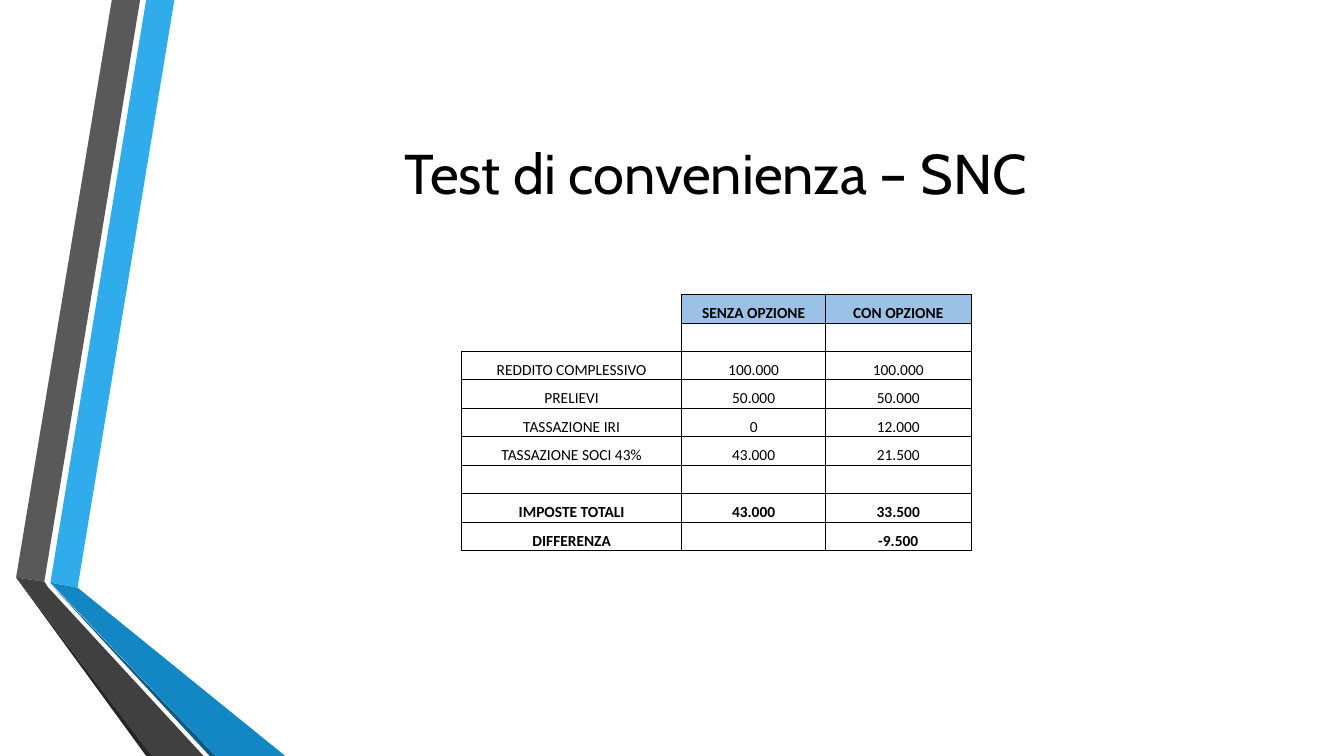
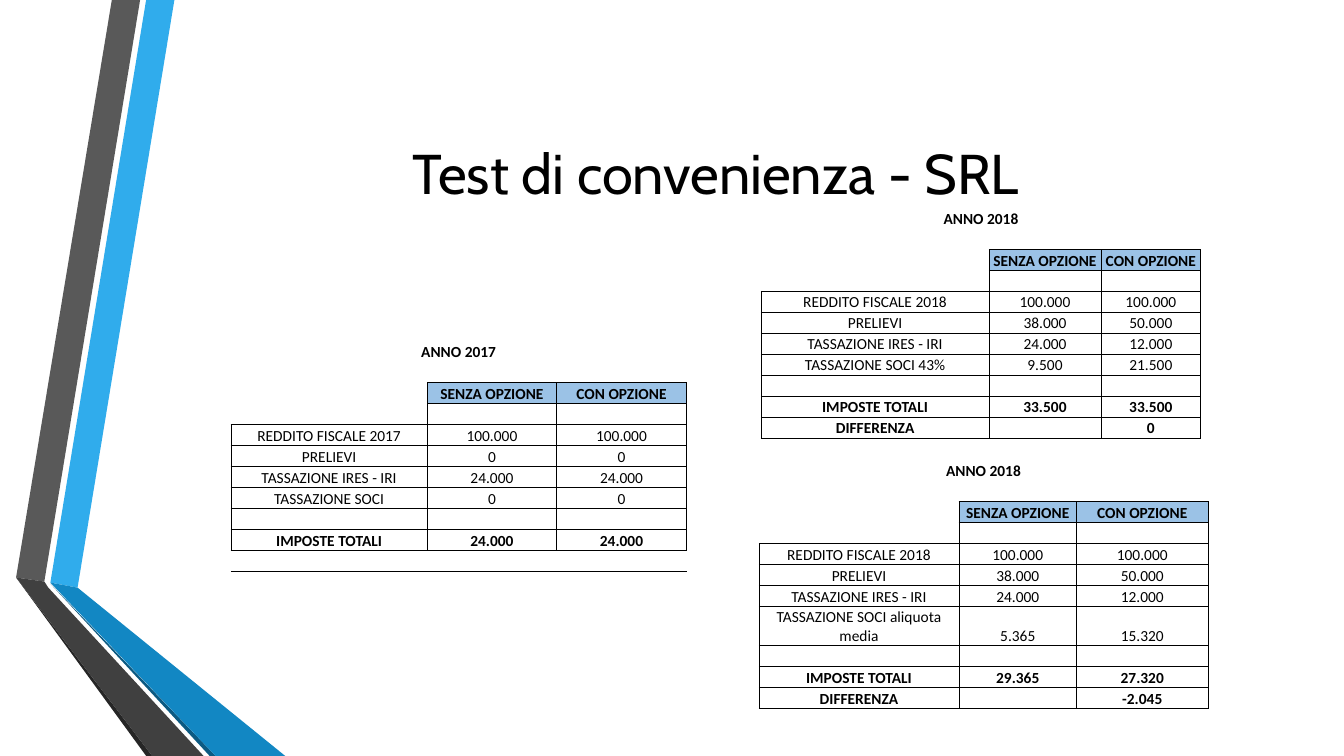
from lxml.etree import SubElement
from pptx import Presentation
from pptx.dml.color import RGBColor
from pptx.enum.text import MSO_ANCHOR, PP_ALIGN
from pptx.oxml.ns import qn
from pptx.util import Inches, Pt

COLORS = {
    "text": "000000", "paper": "FFFFFF", "header": "9BC2E6",
    "blue": "30ACEC", "blue_fold": "1287C3", "blue_edge": "0C5A82",
    "gray": "595959", "gray_fold": "404040", "gray_edge": "262626",
}
BANDS = [
    ("blue", [(0.5, 5.78), (0.77, 5.83), (1.73, 0), (1.45, 0)]),
    ("gray", [(1.39, 0), (1.11, 0), (0.16, 5.73), (0.44, 5.77)]),
    ("gray_edge", [(0.16, 5.73), (1.45, 7.5), (1.51, 7.5)]),
    ("blue_edge", [(0.5, 5.79), (2.08, 7.5), (2.14, 7.5)]),
    ("blue_fold", [(0.5, 5.78), (2.14, 7.5), (2.83, 7.5), (0.77, 5.83)]),
    ("gray_fold", [(0.16, 5.73), (1.51, 7.5), (2.02, 7.5), (0.48, 5.83), (0.44, 5.77)]),
]
NO_STYLE = "{2D5ABB26-0587-4C30-8999-92F81FD0307C}"
SIDES = {"a:lnL": (0, -1), "a:lnR": (0, 1), "a:lnT": (-1, 0), "a:lnB": (1, 0)}
CELL_FORMAT = {
    "margin_left": Inches(0.01), "margin_right": Inches(0.01),
    "margin_top": Inches(0.01), "margin_bottom": 0,
    "vertical_anchor": MSO_ANCHOR.BOTTOM,
}
CELL_FONT = {"name": "Calibri", "size": Pt(11)}
TITLE_FONT = {"name": "Cabin", "size": Pt(40), "bold": False}

BLANK = ("", "", "")
HEADER = ("", "SENZA OPZIONE", "CON OPZIONE")


def rgb(color):
    return RGBColor.from_string(COLORS[color])


def apply(target, values):
    for attribute, value in values.items():
        setattr(target, attribute, value)


class Deck:
    def __init__(self):
        self.prs = Presentation()
        self.prs.slide_width, self.prs.slide_height = Inches(13.33), Inches(7.5)
        self.slide = None

    def add_slide(self, title):
        self.slide = self.prs.slides.add_slide(self.prs.slide_layouts[5])
        background = self.slide.background.fill
        background.solid()
        background.fore_color.rgb = rgb("paper")
        for color, outline in BANDS:
            self.add_band(color, outline)
        self.add_title(title)

    def add_band(self, color, outline):
        start, *others = [(Inches(x), Inches(y)) for x, y in outline]
        builder = self.slide.shapes.build_freeform(*start)
        builder.add_line_segments(others, close=True)
        band = builder.convert_to_shape()
        band.shadow.inherit = False
        band.fill.solid()
        band.fill.fore_color.rgb = rgb(color)
        band.line.fill.background()

    def add_title(self, text):
        title = self.slide.shapes.title
        apply(title, {"left": Inches(1.62), "top": Inches(0.75),
                      "width": Inches(10.96), "height": Inches(1.92)})
        frame = title.text_frame
        apply(frame, {"text": text, "word_wrap": True, "vertical_anchor": MSO_ANCHOR.MIDDLE})
        self.format_text(frame.paragraphs[0], TITLE_FONT)

    def format_text(self, paragraph, font):
        paragraph.alignment = PP_ALIGN.CENTER
        for run in paragraph.runs:
            apply(run.font, font)
            run.font.color.rgb = rgb("text")

    def add_comparison(self, left, top, widths, row_height, body, totals,
                       caption=None, blank_above=0, blank_below=1, tall_rows=None):
        """Add a ruled three-column grid inside a margin of empty, unruled cells."""
        lead = [BLANK] * blank_above
        if caption:
            lead += [(caption, "", ""), BLANK]
        rows = lead + [HEADER, BLANK, *body, BLANK, *totals] + [BLANK] * blank_below
        header_row = len(lead)
        totals_row = header_row + len(body) + 3
        end_row = totals_row + len(totals)

        def is_ruled(row, column):
            first_row = header_row + 2 if column == 1 else header_row
            return 1 <= column <= 3 and first_row <= row < end_row

        heights = [(tall_rows or {}).get(label, row_height) for label, *_ in rows]
        frame = self.slide.shapes.add_table(
            len(rows), len(widths), Inches(left), Inches(top),
            Inches(sum(widths)), Inches(sum(heights)))
        table = frame.table
        apply(table, {"first_row": False, "horz_banding": False})
        for style in frame._element.iter(qn("a:tableStyleId")):
            style.text = NO_STYLE
        for column, width in zip(table.columns, widths):
            column.width = Inches(width)
        for row, height in zip(table.rows, heights):
            row.height = Inches(height)

        for r, texts in enumerate(rows):
            bold = r <= header_row or r >= totals_row
            for c, text in enumerate(("", *texts, "")):
                cell = table.cell(r, c)
                sides = [side for side, (dr, dc) in SIDES.items()
                         if is_ruled(r, c) or is_ruled(r + dr, c + dc)]
                self.fill_cell(cell, text, bold, sides)
                if r == header_row and text:
                    cell.fill.solid()
                    cell.fill.fore_color.rgb = rgb("header")
        if caption:
            caption_row = blank_above
            table.cell(caption_row, 1).merge(table.cell(caption_row, 3))

    def fill_cell(self, cell, text, bold, sides):
        apply(cell, CELL_FORMAT)
        paragraph = cell.text_frame.paragraphs[0]
        if text:
            paragraph.add_run().text = text
        self.format_text(paragraph, {**CELL_FONT, "bold": bold})
        if not text:
            SubElement(paragraph._p, qn("a:endParaRPr"), sz="1100")
        properties = cell._tc.get_or_add_tcPr()
        for side in sides:
            line = SubElement(properties, qn(side), w=str(Pt(0.5)))
            fill = SubElement(line, qn("a:solidFill"))
            SubElement(fill, qn("a:srgbClr"), val=COLORS["text"])
        cell.fill.background()


def main():
    deck = Deck()
    deck.add_slide("Test di convenienza – SNC")
    deck.add_comparison(
        3.83, 2.64, [0.75, 2.18, 1.43, 1.44, 0.75], 0.282, blank_above=1,
        body=[("REDDITO COMPLESSIVO", "100.000", "100.000"),
              ("PRELIEVI", "50.000", "50.000"),
              ("TASSAZIONE IRI", "0", "12.000"),
              ("TASSAZIONE SOCI 43%", "43.000", "21.500")],
        totals=[("IMPOSTE TOTALI", "43.000", "33.500"),
                ("DIFFERENZA", "", "-9.500")])

    deck.add_slide("Test di convenienza - SRL")
    row_height = 0.208
    deck.add_comparison(
        1.62, 3.38, [0.67, 1.95, 1.28, 1.29, 0.67], row_height,
        caption="ANNO 2017", blank_below=2,
        body=[("REDDITO FISCALE 2017", "100.000", "100.000"),
              ("PRELIEVI", "0", "0"),
              ("TASSAZIONE IRES - IRI", "24.000", "24.000"),
              ("TASSAZIONE SOCI", "0", "0")],
        totals=[("IMPOSTE TOTALI", "24.000", "24.000")])

    body_2018 = [("REDDITO FISCALE 2018", "100.000", "100.000"),
                 ("PRELIEVI", "38.000", "50.000"),
                 ("TASSAZIONE IRES - IRI", "24.000", "12.000")]
    deck.add_comparison(
        6.47, 1.85, [1.08, 2.26, 1.11, 0.99, 0.67], row_height,
        caption="ANNO 2018", blank_above=1,
        body=body_2018 + [("TASSAZIONE SOCI 43%", "9.500", "21.500")],
        totals=[("IMPOSTE TOTALI", "33.500", "33.500"),
                ("DIFFERENZA", "", "0")])
    average_rate = "TASSAZIONE SOCI aliquota media"
    deck.add_comparison(
        6.92, 4.56, [0.61, 1.98, 1.17, 1.3, 0.61], row_height,
        caption="ANNO 2018", tall_rows={average_rate: 0.39},
        body=body_2018 + [(average_rate, "5.365", "15.320")],
        totals=[("IMPOSTE TOTALI", "29.365", "27.320"),
                ("DIFFERENZA", "", "-2.045")])
    deck.prs.save("out.pptx")


if __name__ == "__main__":
    main()
